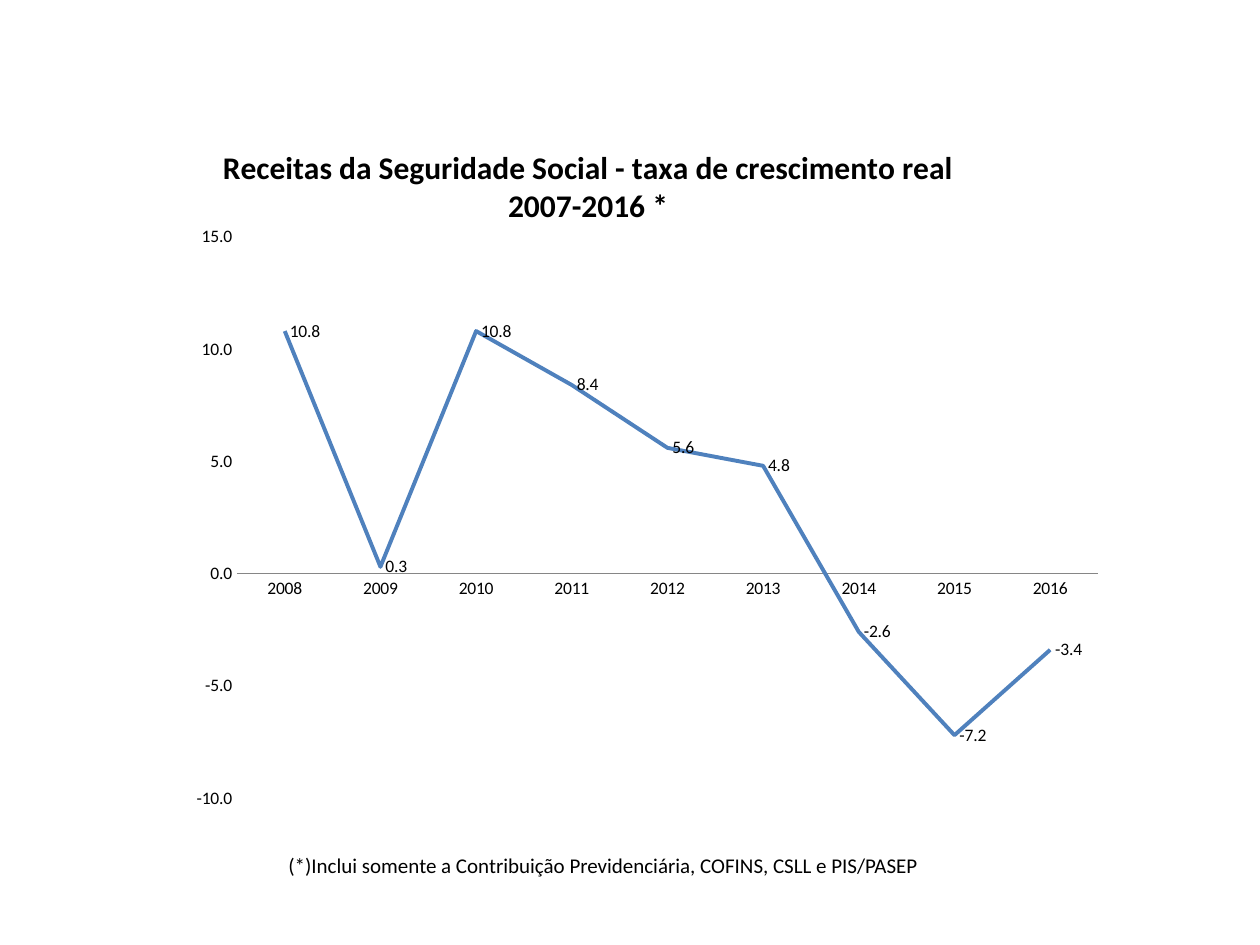
from lxml import etree
from pptx import Presentation
from pptx.chart.data import CategoryChartData
from pptx.dml.color import RGBColor
from pptx.enum.chart import XL_CHART_TYPE as ChartType
from pptx.enum.chart import XL_LABEL_POSITION as LabelPosition
from pptx.enum.chart import XL_TICK_MARK as TickMark
from pptx.enum.text import MSO_AUTO_SIZE as AutoSize
from pptx.oxml import parse_xml
from pptx.oxml.ns import nsdecls, qn
from pptx.util import Inches, Pt

FONT = "Calibri"
BLACK, BLUE, GRAY = "000000", "4F81BD", "868686"
TITLE = "Receitas da Seguridade Social - taxa de crescimento real 2007-2016 *"
NOTE = "(*)Inclui somente a Contribuição Previdenciária, COFINS, CSLL e PIS/PASEP"
GROWTH = [10.8, 0.3, 10.8, 8.4, 5.6, 4.8, -2.6, -7.2, -3.4]
YEARS = [str(2008 + i) for i in range(len(GROWTH))]


def color(hex_code):
    return RGBColor.from_string(hex_code)


def style_font(font, size, bold=False):
    font.name = FONT
    font.size = Pt(size)
    font.bold = bold
    font.color.rgb = color(BLACK)


def manual_layout(x, y, w=None, h=None, inner=False):
    """Layout element with positions as fractions of the chart area."""
    layout = parse_xml(f"<c:layout {nsdecls('c')}><c:manualLayout/></c:layout>")
    settings = [("layoutTarget", "inner")] if inner else []
    settings += [("xMode", "edge"), ("yMode", "edge"), ("x", x), ("y", y)]
    if w is not None:
        settings += [("w", w), ("h", h)]
    for tag, value in settings:
        etree.SubElement(layout[0], qn(f"c:{tag}"), val=str(value))
    return layout


def set_layout(parent, layout, index):
    for old in parent.findall(qn("c:layout")):
        parent.remove(old)
    parent.insert(index, layout)


def add_title(chart):
    chart.has_title = True
    title = chart.chart_title
    paragraph = title.text_frame.paragraphs[0]
    paragraph.text = TITLE
    style_font(paragraph.font, 18, bold=True)
    title.include_in_layout = False
    set_layout(title._element, manual_layout(0.11, 0.02), 1)


def style_axes(chart):
    years, rates = chart.category_axis, chart.value_axis
    for axis in (years, rates):
        axis.major_tick_mark = axis.minor_tick_mark = TickMark.NONE
        axis.has_major_gridlines = False
        style_font(axis.tick_labels.font, 10)
    years.format.line.color.rgb = color(GRAY)
    years.format.line.width = Pt(0.75)
    rates.minimum_scale, rates.maximum_scale, rates.major_unit = -10, 15, 5
    rates.format.line.fill.background()
    rates.tick_labels.number_format = "0.0"
    rates.tick_labels.number_format_is_linked = False


def style_growth_line(chart):
    growth = chart.plots[0].series[0]
    growth.smooth = False
    growth.format.line.color.rgb = color(BLUE)
    growth.format.line.width = Pt(2.25)
    labels = growth.data_labels
    labels.show_value = True
    labels.position = LabelPosition.RIGHT
    labels.number_format = "0.0"
    labels.number_format_is_linked = False
    style_font(labels.font, 10)


def add_growth_chart(slide):
    data = CategoryChartData(number_format="0.0")
    data.categories = YEARS
    data.add_series("Series 1", GROWTH)
    chart = slide.shapes.add_chart(
        ChartType.LINE, Inches(0.86), Inches(1), Inches(7.86), Inches(5.5), data
    ).chart
    style_font(chart.font, 10)
    chart.has_legend = False
    chart.plots[0].vary_by_categories = False
    add_title(chart)
    style_axes(chart)
    style_growth_line(chart)
    plot_area = chart._chartSpace.chart.plotArea
    set_layout(plot_area, manual_layout(0.13, 0.16, 0.87, 0.81, inner=True), 0)


def add_note(slide):
    note = slide.shapes.add_textbox(
        Inches(2.19), Inches(6.72), Inches(5.63), Inches(0.3)
    ).text_frame
    note.word_wrap = True
    note.auto_size = AutoSize.SHAPE_TO_FIT_TEXT
    paragraph = note.paragraphs[0]
    paragraph.text = NOTE
    style_font(paragraph.font, 12)


def main():
    presentation = Presentation()
    presentation.slide_width, presentation.slide_height = Inches(10), Inches(7.5)
    slide = presentation.slides.add_slide(presentation.slide_layouts[6])

    # Growth rates by year
    add_growth_chart(slide)

    # Footnote on the revenues included
    add_note(slide)

    presentation.save("out.pptx")


if __name__ == "__main__":
    main()
